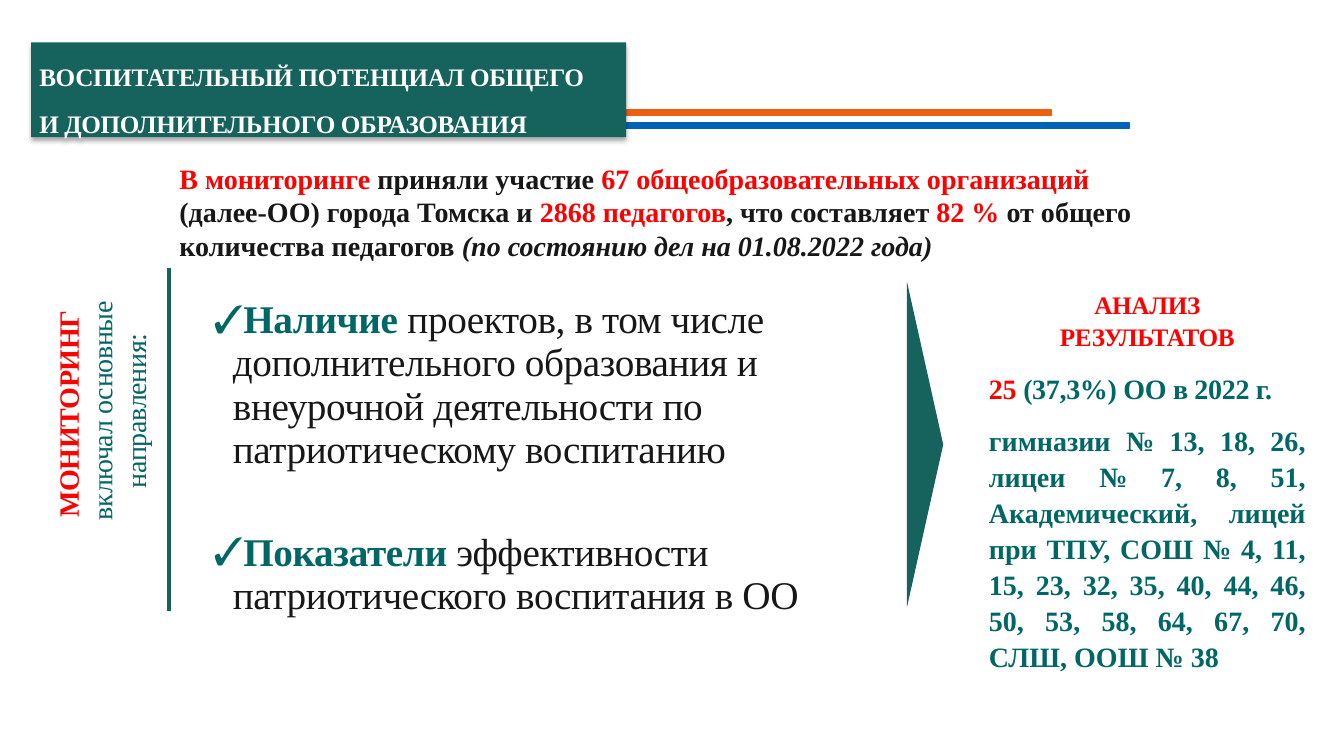
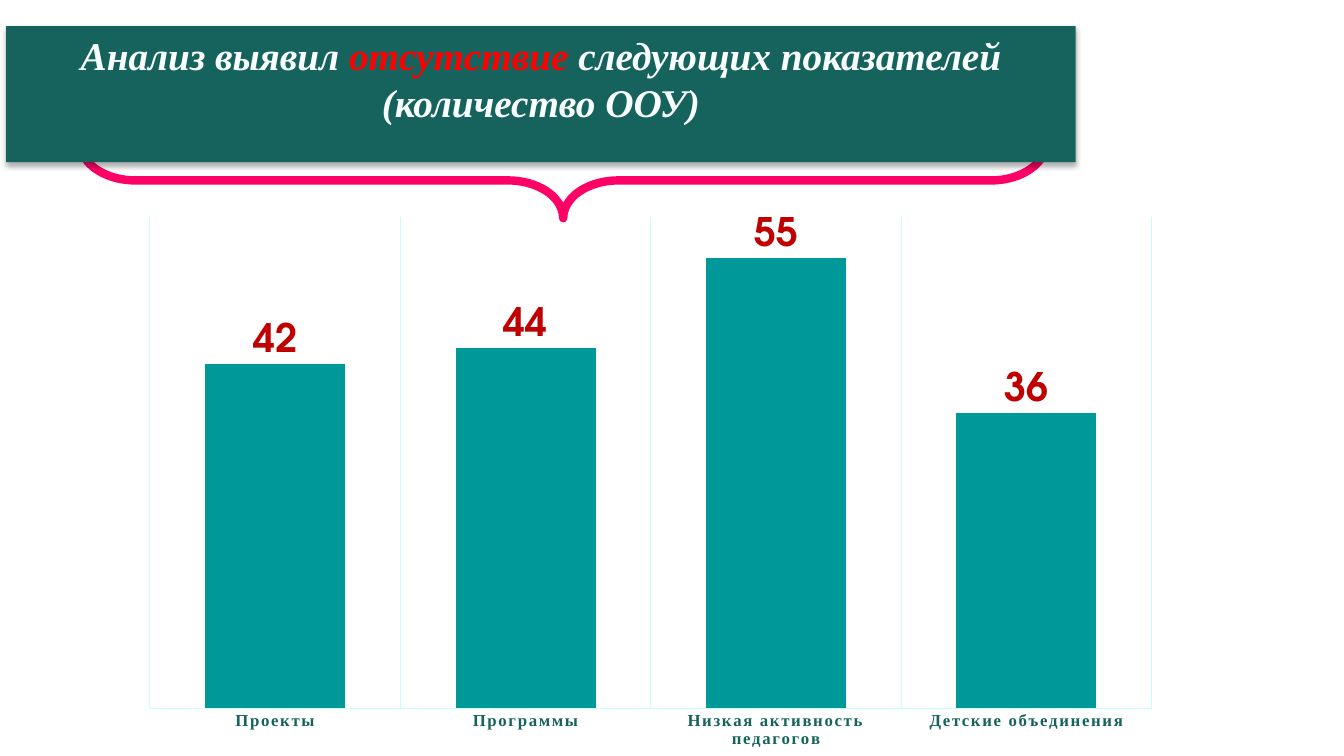
from lxml.etree import SubElement
from pptx import Presentation
from pptx.chart.data import CategoryChartData
from pptx.dml.color import RGBColor
from pptx.enum.chart import XL_CHART_TYPE, XL_LABEL_POSITION, XL_TICK_LABEL_POSITION, XL_TICK_MARK
from pptx.enum.shapes import MSO_CONNECTOR, MSO_SHAPE
from pptx.enum.text import MSO_ANCHOR, MSO_AUTO_SIZE, PP_ALIGN
from pptx.oxml.ns import qn
from pptx.util import Pt

PX = 9144
SERIF = "Times New Roman"
SANS = "TeX Gyre Adventor"
TIGHT = -25
HEX = {
    "green": "16625C", "teal": "006666", "bar": "009999", "red": "FF0000",
    "dark": "C00000", "ink": "181717", "white": "FFFFFF", "pale": "F9FFFE",
    "orange": "EC5F0F", "blue": "0063B8", "pink": "FF0066", "grid": "C2FFFF",
    "shade": "000000",
}
ALIGN = {"left": PP_ALIGN.LEFT, "center": PP_ALIGN.CENTER, "just": PP_ALIGN.JUSTIFY}


def rgb(name):
    return RGBColor.from_string(HEX[name])


def place(*sizes):
    return [size * PX for size in sizes]


def style(font, size, color, face=SERIF, bold=True, italic=False):
    font.name, font.size = face, Pt(size)
    font.bold, font.italic = bold, italic
    font.color.rgb = rgb(color)


def write(frame, paras, align="left", line=None, gap=0, mark=None, track=0, **look):
    """Fill a frame with paragraphs of (text, format) runs; keywords give the shared format."""
    frame.word_wrap = True
    frame.auto_size = MSO_AUTO_SIZE.NONE
    frame.vertical_anchor = MSO_ANCHOR.TOP
    for num, (runs, own) in enumerate(paras):
        para = frame.paragraphs[0] if num == 0 else frame.add_paragraph()
        if mark:
            props = para._p.get_or_add_pPr()
            props.set("marL", str(19 * PX))
            props.set("indent", str(-19 * PX))
            SubElement(props, qn("a:buFont")).set("typeface", SERIF)
            SubElement(props, qn("a:buChar")).set("char", mark)
        para.alignment = ALIGN[own.get("align", align)]
        para.line_spacing = line
        para.space_before = Pt(own.get("gap", gap) if num else 0)
        for text, extra in runs:
            run = para.add_run()
            run.text = text
            form = {"track": track, **look, **extra}
            space = form.pop("track")
            style(run.font, **form)
            if space:
                run._r.get_or_add_rPr().set("spc", str(space))


def label(slide, spot, paras, turn=0, **look):
    box = slide.shapes.add_textbox(*place(*spot))
    box.rotation = turn
    write(box.text_frame, paras, **look)


def block(slide, kind, spot, fill=None, edge=None, width=1, turn=0):
    shape = slide.shapes.add_shape(kind, *place(*spot))
    shape.shadow.inherit = False
    shape.rotation = turn
    if fill:
        shape.fill.solid()
        shape.fill.fore_color.rgb = rgb(fill)
    else:
        shape.fill.background()
    if edge:
        shape.line.color.rgb = rgb(edge)
        shape.line.width = Pt(width)
        shape.element.spPr.find(qn("a:ln")).set("cap", "flat")
    else:
        shape.line.fill.background()
    return shape


def rule(slide, start, end, color, width):
    line = slide.shapes.add_connector(MSO_CONNECTOR.STRAIGHT, *place(*start, *end))
    line.line.color.rgb = rgb(color)
    line.line.width = Pt(width)
    SubElement(line.element.spPr, qn("a:effectLst"))


def banner(slide, spot, paras, side=10, head=5, **look):
    """Turn the title placeholder into the green shadowed band on top of the slide."""
    title = slide.shapes.title
    title.left, title.top, title.width, title.height = place(*spot)
    title.fill.solid()
    title.fill.fore_color.rgb = rgb("green")
    effects = SubElement(title.element.spPr, qn("a:effectLst"))
    shadow = SubElement(effects, qn("a:outerShdw"), blurRad=str(Pt(3.5)),
                        dist=str(Pt(2.2)), dir="5400000", rotWithShape="0")
    color = SubElement(shadow, qn("a:srgbClr"), val=HEX["shade"])
    SubElement(color, qn("a:alpha"), val="32000")
    frame = title.text_frame
    frame.margin_left = frame.margin_right = side * PX
    frame.margin_top = frame.margin_bottom = head * PX
    write(frame, paras, **look)
    slide.shapes.element.append(title.element)


def checks(slide, spot, rows, items):
    table = slide.shapes.add_table(len(rows), 1, *place(*spot)).table
    table.first_row = table.horz_banding = False
    for num, height in enumerate(rows):
        table.rows[num].height = height * PX
        cell = table.cell(num, 0)
        cell.fill.solid()
        cell.fill.fore_color.rgb = rgb("white")
        cell.margin_left = cell.margin_right = 7 * PX
        cell.margin_top = cell.margin_bottom = 0
        if num < len(items):
            head, rest = items[num]
            runs = [(head, {"color": "teal"}), (rest, {"color": "ink", "bold": False})]
            write(cell.text_frame, [(runs, {})], mark="✓", size=28, track=TIGHT)


def bars(slide, spot, names, values):
    data = CategoryChartData()
    data.categories = names
    data.add_series("Series 1", values)
    chart = slide.shapes.add_chart(XL_CHART_TYPE.COLUMN_CLUSTERED, *place(*spot), data).chart
    chart.has_legend = chart.has_title = False
    style(chart.font, 10, "teal", SANS, bold=False)
    plot = chart.plots[0]
    plot.gap_width = 79
    plot.vary_by_categories = False
    fill = plot.series[0].format.fill
    fill.solid()
    fill.fore_color.rgb = rgb("bar")
    plot.has_data_labels = True
    tags = plot.data_labels
    tags.show_value = True
    tags.position = XL_LABEL_POSITION.OUTSIDE_END
    style(tags.font, 28, "dark", SANS)
    scale = chart.value_axis
    scale.minimum_scale, scale.maximum_scale = 0, 60
    scale.has_major_gridlines = scale.visible = False
    axis = chart.category_axis
    axis.has_major_gridlines = True
    axis.major_tick_mark = axis.minor_tick_mark = XL_TICK_MARK.NONE
    axis.tick_label_position = XL_TICK_LABEL_POSITION.NEXT_TO_AXIS
    for line in (axis.format.line, axis.major_gridlines.format.line):
        line.color.rgb = rgb("grid")
        line.width = Pt(0.75)
    style(axis.tick_labels.font, 12, "green")
    for props in axis._element.iter(qn("a:defRPr")):
        props.set("spc", "120")


def survey(slide):
    red, teal = {"color": "red"}, {"color": "teal"}
    label(slide, (-73, 352, 348, 111), [
        ([("МОНИТОРИНГ ", red)], {}),
        ([("включал основные направления:", {**teal, "bold": False})], {}),
    ], turn=270, align="center", size=20, track=TIGHT)
    block(slide, MSO_SHAPE.ISOSCELES_TRIANGLE, (756, 423, 323, 36), "green", turn=90)
    checks(slide, (205, 296, 659, 434), (231, 89, 28, 30, 28, 28), [
        ("Наличие ", "проектов, в том числе дополнительного образования и "
                     "внеурочной деятельности по патриотическому воспитанию"),
        ("Показатели ", "эффективности патриотического воспитания в ОО"),
    ])
    label(slide, (168, 155, 998, 111), [([
        ("В мониторинге ", red),
        ("приняли участие ", {}),
        ("67 общеобразовательных организаций ", red),
        ("(далее-ОО) города Томска и ", {}),
        ("2868 педагогов", red),
        (", что составляет ", {}),
        ("82 %", red),
        (" от общего количества педагогов ", {}),
        ("(по состоянию дел на 01.08.2022 года)", {"italic": True}),
    ], {})], size=20, color="ink")
    rule(slide, (168, 266), (168, 606), "green", 3)
    head = {"color": "red", "size": 18}
    label(slide, (971, 280, 334, 418), [
        ([("АНАЛИЗ", head)], {"align": "center"}),
        ([("РЕЗУЛЬТАТОВ", head)], {"align": "center"}),
        ([("25 ", red), ("(37,3%) ОО в 2022 г.", {})], {"gap": 12}),
        ([("гимназии № 13, 18, 26, лицеи № 7, 8, 51, Академический, лицей при ТПУ, "
           "СОШ № 4, 11, 15, 23, 32, 35, 40, 44, 46, 50, 53, 58, 64, 67, 70, "
           "СЛШ, ООШ № 38", {"track": 0})], {"align": "just", "gap": 12}),
    ], line=1.07, size=20, color="teal", track=TIGHT)
    for spot, color in (((496, 109, 547, 5), "orange"), ((492, 122, 628, 5), "blue")):
        block(slide, MSO_SHAPE.RECTANGLE, spot, color, color)
    banner(slide, (31, 42, 590, 94), [
        ([("ВОСПИТАТЕЛЬНЫЙ ПОТЕНЦИАЛ ОБЩЕГО", {})], {}),
        ([("И ДОПОЛНИТЕЛЬНОГО ОБРАЗОВАНИЯ", {})], {}),
    ], side=8, head=4, line=1.5, gap=0.8, size=18, color="white", track=TIGHT)


def gaps(slide):
    brace = block(slide, MSO_SHAPE.RIGHT_BRACE, (521, -300, 75, 958),
                  edge="pink", width=6, turn=90)
    brace.adjustments[0] = 0.73
    bars(slide, (128, 204, 1035, 549),
         ("Проекты", "Программы", "Низкая активность педагогов", "Детские объединения"),
         (42, 44, 55, 36))
    banner(slide, (6, 26, 1061, 135), [([
        ("Анализ выявил ", {}),
        ("отсутствие ", {"color": "red"}),
        ("следующих показателей (количество ООУ)", {}),
    ], {})], align="center", size=28, color="pale", italic=True)


def main():
    deck = Presentation()
    deck.slide_width, deck.slide_height = place(1333, 750)
    for build in (survey, gaps):
        build(deck.slides.add_slide(deck.slide_layouts[5]))
    deck.save("out.pptx")


if __name__ == "__main__":
    main()
